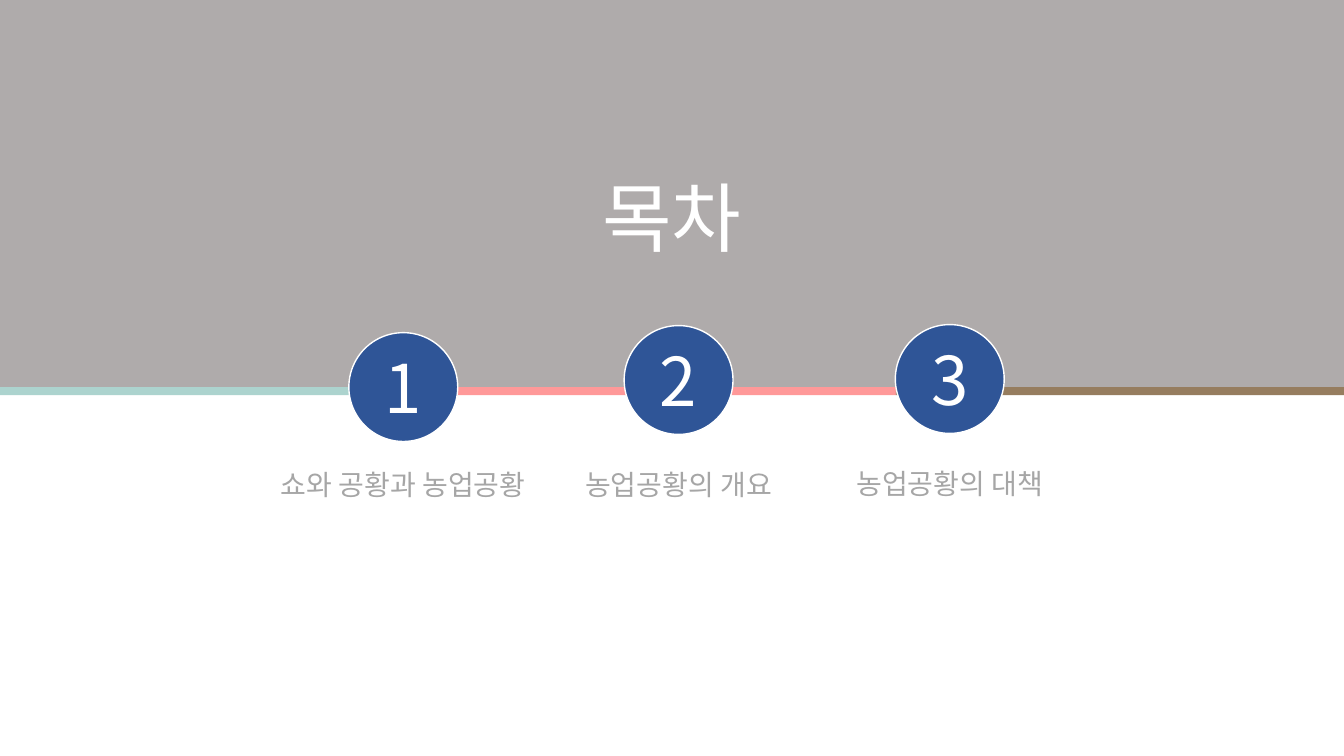
"""Build the table-of-contents slide with three numbered chapters."""
from lxml.etree import SubElement
from pptx import Presentation
from pptx.dml.color import RGBColor
from pptx.enum.shapes import MSO_SHAPE as Shape
from pptx.enum.text import MSO_ANCHOR as Anchor, PP_ALIGN as Align
from pptx.oxml.ns import qn
from pptx.util import Inches, Pt

WHITE = RGBColor(0xFF, 0xFF, 0xFF)
WARM_GRAY = RGBColor(0xAF, 0xAB, 0xAB)
LABEL_GRAY = RGBColor(0xA6, 0xA6, 0xA6)
NAVY = RGBColor(0x2F, 0x55, 0x97)
MINT = RGBColor(0xAC, 0xD3, 0xCE)
PINK = RGBColor(0xFF, 0x99, 0x99)
BROWN = RGBColor(0x96, 0x7D, 0x5F)

FONT = "Noto Sans CJK KR"
TITLE = "목차"
STRIPES = [MINT, PINK, BROWN]
# label, circle left, circle top, label top, label height
CHAPTERS = [
    ("쇼와 공황과 농업공황", 3.46, 3.3, 4.42, 0.61),
    ("농업공황의 개요", 6.19, 3.23, 4.42, 0.55),
    ("농업공황의 대책", 8.88, 3.22, 4.41, 0.55),
]
WIDTH, HEIGHT = 13.33, 7.5
BANNER_HEIGHT, STRIPE_HEIGHT = 3.84, 0.08
CIRCLE, LABEL_WIDTH = 1.08, 2.97


def write(box, text, size, color, spacing=None):
    box.text_frame.word_wrap = True
    para = box.text_frame.paragraphs[0]
    para.alignment = Align.CENTER
    if spacing:
        para.line_spacing = spacing
    span = para.add_run()
    span.text = text
    span.font.size = Pt(size)
    span.font.name = FONT
    span.font.color.rgb = color
    SubElement(span.font._element, qn("a:ea"), typeface=FONT)


def add_filled(page, kind, left, top, width, height, fill):
    shape = page.shapes.add_shape(
        kind, Inches(left), Inches(top), Inches(width), Inches(height))
    shape.shadow.inherit = False
    shape.fill.solid()
    shape.fill.fore_color.rgb = fill
    shape.line.fill.background()
    shape.text_frame.vertical_anchor = Anchor.MIDDLE
    return shape


def main():
    deck = Presentation()
    deck.slide_width, deck.slide_height = Inches(WIDTH), Inches(HEIGHT)
    page = deck.slides.add_slide(deck.slide_layouts[6])

    banner = add_filled(page, Shape.RECTANGLE, 0, 0, WIDTH, BANNER_HEIGHT, WARM_GRAY)
    write(banner, TITLE, 54, WHITE, 1.5)

    stripe_width = WIDTH / len(STRIPES)
    for index, color in enumerate(STRIPES):
        add_filled(page, Shape.RECTANGLE, index * stripe_width, BANNER_HEIGHT,
                   stripe_width, STRIPE_HEIGHT, color)

    for number, (label, left, top, label_top, label_height) in enumerate(CHAPTERS, 1):
        circle = add_filled(page, Shape.OVAL, left, top, CIRCLE, CIRCLE, NAVY)
        circle.line.color.rgb = WHITE
        circle.line.width = Pt(1)
        write(circle, str(number), 48, WHITE)
        label_left = left + (CIRCLE - LABEL_WIDTH) / 2
        box = page.shapes.add_textbox(Inches(label_left), Inches(label_top),
                                      Inches(LABEL_WIDTH), Inches(label_height))
        write(box, label, 20, LABEL_GRAY, 1.5)

    deck.save("out.pptx")


if __name__ == "__main__":
    main()
